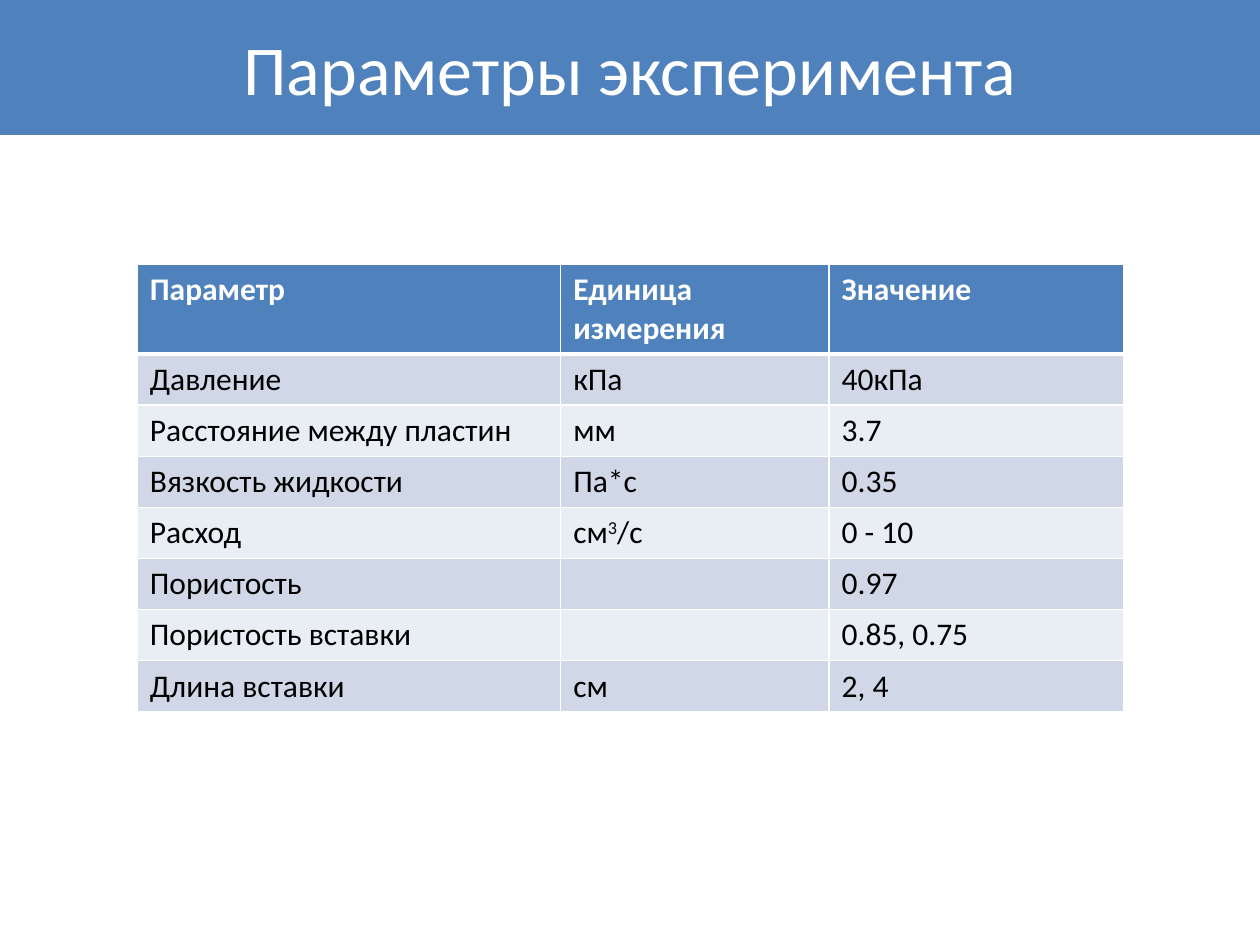
from typing import NamedTuple

import pptx
import pptx.dml.color
import pptx.enum.text
import pptx.oxml
import pptx.oxml.ns
import pptx.util

RGBColor = pptx.dml.color.RGBColor
BLUE = RGBColor(0x4F, 0x81, 0xBD)
BANDS = (RGBColor(0xD0, 0xD8, 0xE8), RGBColor(0xE9, 0xED, 0xF4))
WHITE = RGBColor(0xFF, 0xFF, 0xFF)
BLACK = RGBColor(0, 0, 0)
FONT = "Calibri"

SLIDE_WIDTH = pptx.util.Inches(10)
SLIDE_HEIGHT = pptx.util.Inches(7.5)
TABLE_LEFT, TABLE_TOP = 0.109, 0.28  # shares of the slide's size
COLUMN_SHARES = (0.336, 0.213, 0.234)
HEADER_HEIGHT = pptx.util.Pt(50.4)
ROW_HEIGHT = pptx.util.Pt(29.2)
THIN, THICK = 1, 3


class Parameter(NamedTuple):
    name: str
    unit: str  # "^" surrounds a superscript
    value: str


HEADER = Parameter("Параметр", "Единица измерения", "Значение")
PARAMETERS = (
    Parameter("Давление", "кПа", "40кПа"),
    Parameter("Расстояние между пластин", "мм", "3.7"),
    Parameter("Вязкость жидкости", "Па*с", "0.35"),
    Parameter("Расход", "см^3^/с", "0 - 10"),
    Parameter("Пористость", "", "0.97"),
    Parameter("Пористость вставки", "", "0.85, 0.75"),
    Parameter("Длина вставки", "см", "2, 4"),
)


def format_font(paragraph, size: float, color: RGBColor, bold: bool = False) -> None:
    font = paragraph.font
    font.name, font.size, font.bold = FONT, pptx.util.Pt(size), bold
    font.color.rgb = color


def add_title(slide) -> None:
    title = slide.shapes.title
    title.left, title.top = 0, 0
    title.width, title.height = SLIDE_WIDTH, pptx.util.Inches(1.07)
    title.fill.solid()
    title.fill.fore_color.rgb = BLUE
    title.text_frame.text = "Параметры эксперимента"
    title.text_frame.vertical_anchor = pptx.enum.text.MSO_ANCHOR.MIDDLE
    paragraph = title.text_frame.paragraphs[0]
    paragraph.alignment = pptx.enum.text.PP_ALIGN.CENTER
    format_font(paragraph, 40, WHITE)


def set_borders(cell, top: int, bottom: int) -> None:
    properties = cell._tc.get_or_add_tcPr()
    for side, points in (("L", THIN), ("R", THIN), ("T", top), ("B", bottom)):
        properties.append(pptx.oxml.parse_xml(
            f'<a:ln{side} {pptx.oxml.ns.nsdecls("a")} w="{pptx.util.Pt(points)}">'
            f'<a:solidFill><a:srgbClr val="{WHITE}"/></a:solidFill></a:ln{side}>'
        ))


def write_cell(cell, text: str, row: int) -> None:
    is_header = row == 0
    set_borders(cell, THICK if row == 1 else THIN, THICK if is_header else THIN)
    cell.fill.solid()
    cell.fill.fore_color.rgb = BLUE if is_header else BANDS[(row - 1) % 2]
    paragraph = cell.text_frame.paragraphs[0]
    format_font(paragraph, 18, WHITE if is_header else BLACK, is_header)
    if not text:
        return
    for index, part in enumerate(text.split("^")):
        run = paragraph.add_run()
        run.text = part
        if index % 2:
            run._r.get_or_add_rPr().set("baseline", "30000")


def add_parameter_table(slide) -> None:
    rows = (HEADER, *PARAMETERS)
    table = slide.shapes.add_table(
        len(rows), len(COLUMN_SHARES),
        int(SLIDE_WIDTH * TABLE_LEFT), int(SLIDE_HEIGHT * TABLE_TOP),
        int(SLIDE_WIDTH * sum(COLUMN_SHARES)),
        HEADER_HEIGHT + ROW_HEIGHT * len(PARAMETERS),
    ).table
    for column, share in zip(table.columns, COLUMN_SHARES):
        column.width = int(SLIDE_WIDTH * share)
    for row, parameter in enumerate(rows):
        table.rows[row].height = ROW_HEIGHT if row else HEADER_HEIGHT
        for column, text in enumerate(parameter):
            write_cell(table.cell(row, column), text, row)


def main() -> None:
    presentation = pptx.Presentation()
    presentation.slide_width = SLIDE_WIDTH
    presentation.slide_height = SLIDE_HEIGHT
    slide = presentation.slides.add_slide(presentation.slide_layouts[5])
    add_title(slide)
    add_parameter_table(slide)
    presentation.save("out.pptx")


if __name__ == "__main__":
    main()
